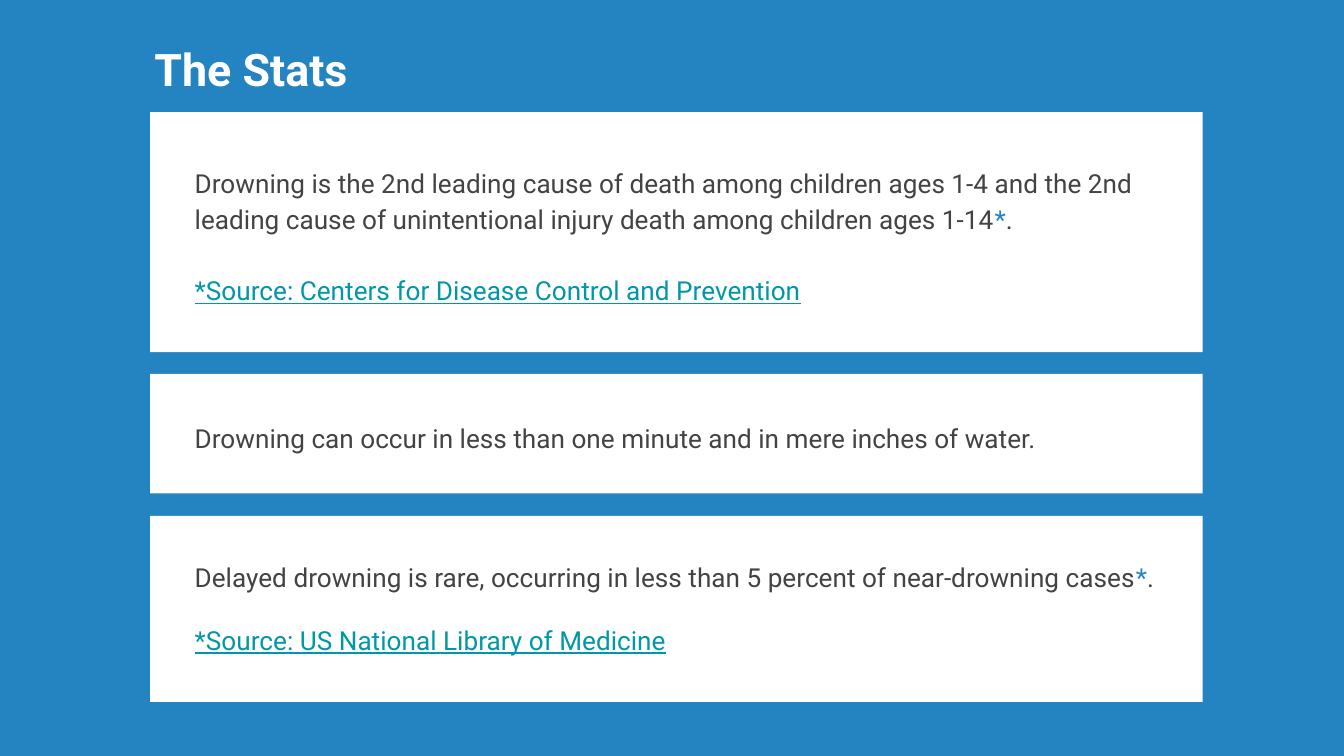
from pptx import Presentation
from pptx.dml.color import RGBColor
from pptx.enum.shapes import MSO_SHAPE as SHAPE
from pptx.enum.text import MSO_ANCHOR as ANCHOR
from pptx.util import Cm, Pt

BLUE, WHITE, GREY, TEAL = "2483C1", "FFFFFF", "434343", "0097A7"


def paint(target, color):
    target.rgb = RGBColor.from_string(color)


def add_text(left, top, width, height, size):
    tf = s.shapes.add_textbox(Cm(left), Cm(top), Cm(width), Cm(height)).text_frame
    tf.word_wrap = True
    tf.margin_left = tf.margin_right = tf.margin_top = tf.margin_bottom = Cm(0.25)
    p = tf.paragraphs[0]
    p.font.name, p.font.size = "Roboto", Pt(size)
    return tf, p


prs = Presentation()
prs.slide_width, prs.slide_height = Cm(25.4), Cm(14.29)
s = prs.slides.add_slide(prs.slide_layouts[6])
s.background.fill.solid()
paint(s.background.fill.fore_color, BLUE)

tf, p = add_text(2.67, 0.48, 7.72, 1.63, 24)
tf.vertical_anchor = ANCHOR.MIDDLE
p.text = "The Stats"
p.font.bold = True
paint(p.font.color, WHITE)

cards = [
    (2.12, 4.54, 2.82, 3.15, 1.15, 19,
     [("Drowning is the 2nd leading cause of death among children ages 1-4 and the 2nd "
       "leading cause of unintentional injury death among children ages 1-14", GREY),
      ("*", BLUE), (".", GREY)],
     "*Source: Centers for Disease Control and Prevention"),
    (7.07, 2.26, 7.65, 1.12, 1.15, 0,
     [("Drowning can occur in less than one minute and in mere inches of water.", GREY)],
     None),
    (9.75, 3.52, 10.36, 2.26, 1, 17,
     [("Delayed drowning is rare, occurring in less than 5 percent of near-drowning cases", GREY),
      ("*", BLUE), (".", GREY)],
     "*Source: US National Library of Medicine"),
]

for top, height, text_top, text_height, spacing, gap, runs, source in cards:
    sp = s.shapes.add_shape(SHAPE.RECTANGLE, Cm(2.84), Cm(top), Cm(19.89), Cm(height))
    sp.shadow.inherit = False
    sp.fill.solid()
    paint(sp.fill.fore_color, WHITE)
    sp.line.fill.background()

    tf, p = add_text(3.43, text_top, 18.92, text_height, 14)
    p.line_spacing = spacing
    for text, color in runs:
        r = p.add_run()
        r.text = text
        paint(r.font.color, color)
    if source:
        p = tf.add_paragraph()
        p.text = source
        p.line_spacing, p.space_before = spacing, Pt(gap)
        p.font.name, p.font.size, p.font.underline = "Roboto", Pt(14), True
        paint(p.font.color, TEAL)

prs.save("out.pptx")
